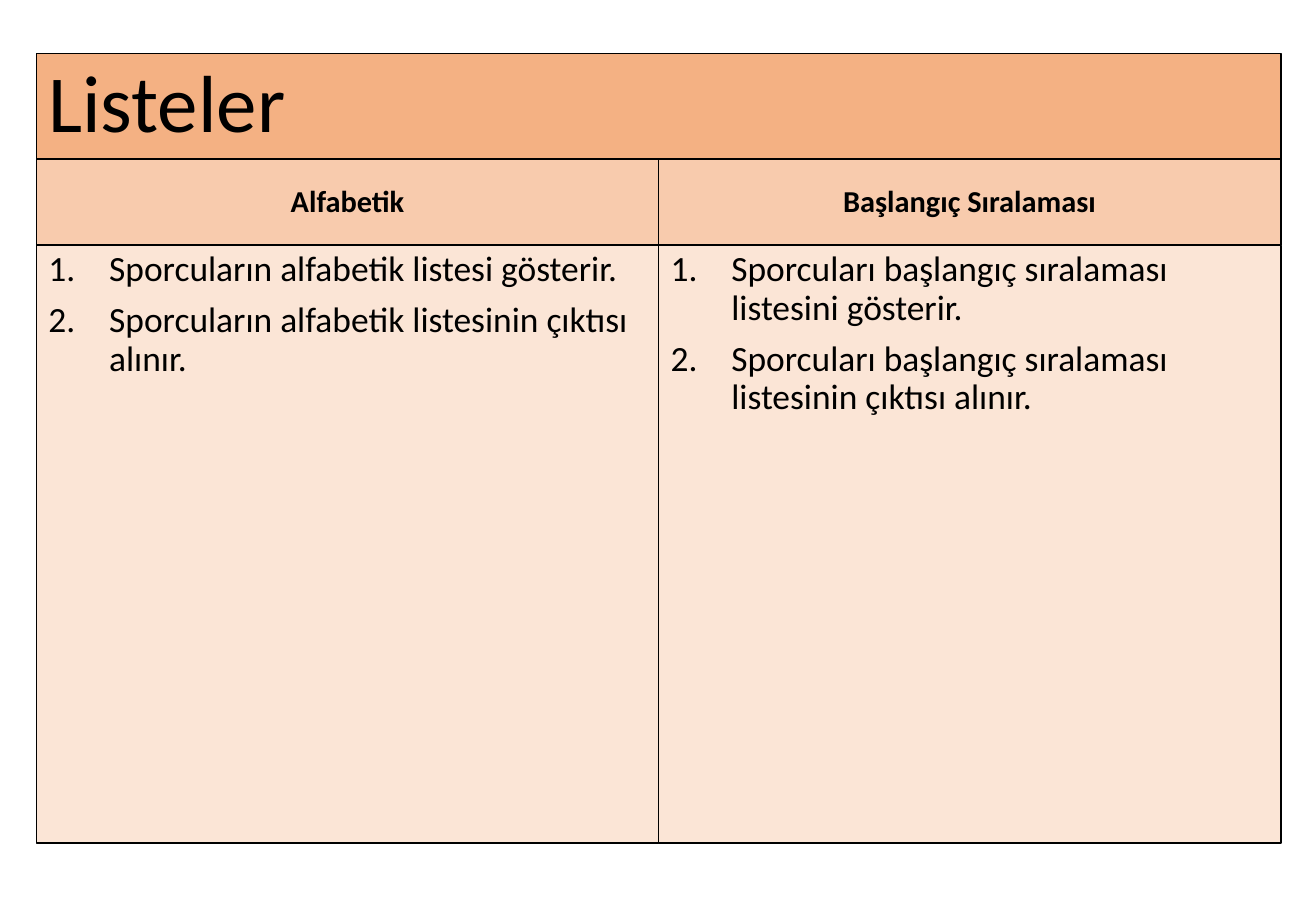
from dataclasses import dataclass

from lxml import etree
from pptx import Presentation
from pptx.dml.color import RGBColor
from pptx.enum.shapes import MSO_SHAPE
from pptx.enum.text import MSO_ANCHOR, PP_ALIGN
from pptx.oxml.ns import qn
from pptx.util import Inches, Pt

RECT = MSO_SHAPE.RECTANGLE
TOP, MIDDLE = MSO_ANCHOR.TOP, MSO_ANCHOR.MIDDLE
LEFT, CENTER = PP_ALIGN.LEFT, PP_ALIGN.CENTER

BLACK = RGBColor(0x00, 0x00, 0x00)
ORANGE = RGBColor(0xF4, 0xB1, 0x83)
PEACH = RGBColor(0xF8, 0xCB, 0xAD)
CREAM = RGBColor(0xFB, 0xE5, 0xD6)

FONT = "Calibri"
WIDTH, HEIGHT = 10.83, 7.5
GRID_LEFT, GRID_TOP = 0.3, 0.44
COL = 5.12
ROWS = (0.87, 0.71, 4.92)
INDENT = 0.5


@dataclass(frozen=True)
class Style:
    """Look shared by all cells of one grid row."""
    fill: RGBColor
    size: float
    bold: bool = False
    align: PP_ALIGN = LEFT
    anchor: MSO_ANCHOR = MIDDLE
    before: float = 7.5
    listed: bool = False


@dataclass(frozen=True)
class Panel:
    head: str
    steps: tuple[str, ...]


STYLES = (
    Style(ORANGE, 48, before=0),
    Style(PEACH, 18, bold=True, align=CENTER),
    Style(CREAM, 21, anchor=TOP, listed=True),
)

TITLE = "Listeler"
PANELS = (
    Panel("Alfabetik", (
        "Sporcuların alfabetik listesi gösterir.",
        "Sporcuların alfabetik listesinin çıktısı alınır.",
    )),
    Panel("Başlangıç Sıralaması", (
        "Sporcuları başlangıç sıralaması listesini gösterir.",
        "Sporcuları başlangıç sıralaması listesinin çıktısı alınır.",
    )),
)


def number(para) -> None:
    """Give a paragraph a hanging automatic number."""
    props = para._p.get_or_add_pPr()
    props.set("marL", str(Inches(INDENT)))
    props.set("indent", str(-Inches(INDENT)))
    etree.SubElement(props, qn("a:buFont"), typeface=FONT)
    etree.SubElement(props, qn("a:buAutoNum"), type="arabicPeriod")


def add_cell(slide, row: int, col: int, lines: tuple[str, ...], span: int = 1) -> None:
    style = STYLES[row]
    cell = slide.shapes.add_shape(
        RECT,
        Inches(GRID_LEFT + col * COL),
        Inches(GRID_TOP + sum(ROWS[:row])),
        Inches(span * COL),
        Inches(ROWS[row]),
    )
    cell.shadow.inherit = False
    cell.fill.solid()
    cell.fill.fore_color.rgb = style.fill
    cell.line.color.rgb = BLACK
    cell.line.width = Pt(1)

    frame = cell.text_frame
    frame.word_wrap = True
    frame.vertical_anchor = style.anchor
    frame.text = "\n".join(lines)
    for para in frame.paragraphs:
        para.alignment = style.align
        para.line_spacing = 0.9
        para.space_before = Pt(style.before)
        if style.listed:
            number(para)
        for run in para.runs:
            run.font.name = FONT
            run.font.size = Pt(style.size)
            run.font.bold = style.bold
            run.font.color.rgb = BLACK


def main() -> None:
    deck = Presentation()
    deck.slide_width, deck.slide_height = Inches(WIDTH), Inches(HEIGHT)
    slide = deck.slides.add_slide(deck.slide_layouts[6])
    add_cell(slide, 0, 0, (TITLE,), span=len(PANELS))
    for col, panel in enumerate(PANELS):
        add_cell(slide, 1, col, (panel.head,))
        add_cell(slide, 2, col, panel.steps)
    deck.save("out.pptx")


if __name__ == "__main__":
    main()
